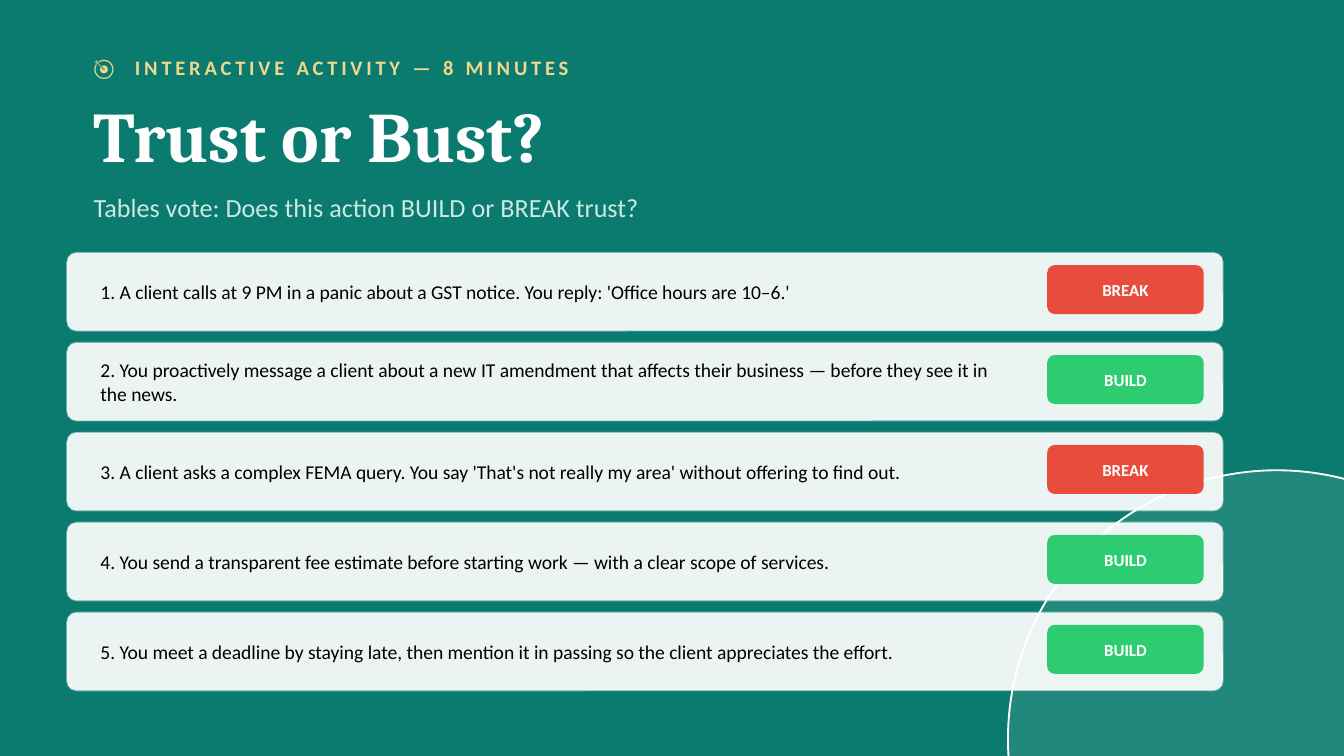
import pptx
import pptx.dml.color
import pptx.enum.shapes
import pptx.enum.text
import pptx.oxml.ns
import pptx.util
from lxml import etree

Cm = pptx.util.Cm
Pt = pptx.util.Pt
Kind = pptx.enum.shapes.MSO_SHAPE
Align = pptx.enum.text.PP_ALIGN
qn = pptx.oxml.ns.qn

COLORS = {
    "teal": "0A7B6E", "white": "FFFFFF", "gold": "F0D78C", "mint": "CCE8E4",
    "black": "000000", "BREAK": "E74C3C", "BUILD": "2ECC71",
}

VOTES = [
    ("1. A client calls at 9 PM in a panic about a GST notice. "
     "You reply: 'Office hours are 10–6.'", "BREAK"),
    ("2. You proactively message a client about a new IT amendment that affects "
     "their business — before they see it in the news.", "BUILD"),
    ("3. A client asks a complex FEMA query. You say 'That's not really my area' "
     "without offering to find out.", "BREAK"),
    ("4. You send a transparent fee estimate before starting work — "
     "with a clear scope of services.", "BUILD"),
    ("5. You meet a deadline by staying late, then mention it in passing "
     "so the client appreciates the effort.", "BUILD"),
]


def rgb(name):
    return pptx.dml.color.RGBColor.from_string(COLORS[name])


def write(frame, text, size=10.5, color="black", font="Calibri", bold=False,
          align=Align.LEFT, space=0, inset=None):
    """Put one formatted line of text into a frame."""
    frame.word_wrap = True
    frame.auto_size = pptx.enum.text.MSO_AUTO_SIZE.NONE
    frame.vertical_anchor = pptx.enum.text.MSO_ANCHOR.MIDDLE
    if inset is not None:
        frame.margin_left = frame.margin_right = Cm(inset)
        frame.margin_top = frame.margin_bottom = Cm(inset)
    para = frame.paragraphs[0]
    para.alignment = align
    run = para.add_run()
    run.text = text
    run.font.name = font
    run.font.size = Pt(size)
    run.font.bold = bold
    run.font.color.rgb = rgb(color)
    if space:
        run.font._element.set("spc", str(space * 100))


class Deck:
    def __init__(self, wide, high):
        self.file = pptx.Presentation()
        self.file.slide_width = Cm(wide)
        self.file.slide_height = Cm(high)
        self.slide = None

    def page(self, color):
        self.slide = self.file.slides.add_slide(self.file.slide_layouts[5])
        fill = self.slide.background.fill
        fill.solid()
        fill.fore_color.rgb = rgb(color)

    def title(self, text, left, top, wide, high, **form):
        head = self.slide.shapes.title
        head.left, head.top = Cm(left), Cm(top)
        head.width, head.height = Cm(wide), Cm(high)
        write(head.text_frame, text, **form)

    def text(self, text, left, top, wide, high, **form):
        box = self.slide.shapes.add_textbox(Cm(left), Cm(top), Cm(wide), Cm(high))
        write(box.text_frame, text, **form)

    def shape(self, kind, left, top, wide, high, color, clear=100, edge=100, bend=None):
        """Add a shape; clear and edge are the fill and line opacity in percent."""
        item = self.slide.shapes.add_shape(kind, Cm(left), Cm(top), Cm(wide), Cm(high))
        item.shadow.inherit = False
        item.line.width = Pt(1)
        if bend is not None:
            item.adjustments[0] = bend
        item.fill.solid()
        for paint, share in ((item.fill.fore_color, clear), (item.line.color, edge)):
            paint.rgb = rgb(color)
            if share < 100:
                node = paint._color._xClr
                etree.SubElement(node, qn("a:alpha")).set("val", str(share * 1000))
        return item


def main():
    deck = Deck(25.4, 14.29)
    deck.page("teal")

    # Corner circle
    deck.shape(Kind.OVAL, 19.05, 8.89, 10.16, 10.16, "white", clear=10)

    # Heading
    left = 1.52
    deck.text("🎯  INTERACTIVE ACTIVITY — 8 MINUTES", left, 0.89, 21.59, 0.76,
              size=11, color="gold", bold=True, space=2)
    deck.title("Trust or Bust?", left, 1.65, 17.78, 1.78,
               size=38, color="white", font="Cambria", bold=True)
    deck.text("Tables vote: Does this action BUILD or BREAK trust?",
              left, 3.43, 17.78, 0.97, size=14, color="mint")

    # Cards with their verdicts
    for row, (claim, vote) in enumerate(VOTES):
        top = 4.78 + 1.7 * row
        deck.shape(Kind.ROUNDED_RECTANGLE, 1.27, top, 21.84, 1.47, "white",
                   clear=92, edge=40, bend=0.12)
        pill = deck.shape(Kind.ROUNDED_RECTANGLE, 19.81, top + 0.25, 2.92, 0.89,
                          vote, bend=0.14)
        write(pill.text_frame, vote, size=9, color="white", bold=True,
              align=Align.CENTER, inset=0)
        deck.text(claim, 1.65, top + 0.15, 17.78, 1.17)

    deck.file.save("out.pptx")


if __name__ == "__main__":
    main()
